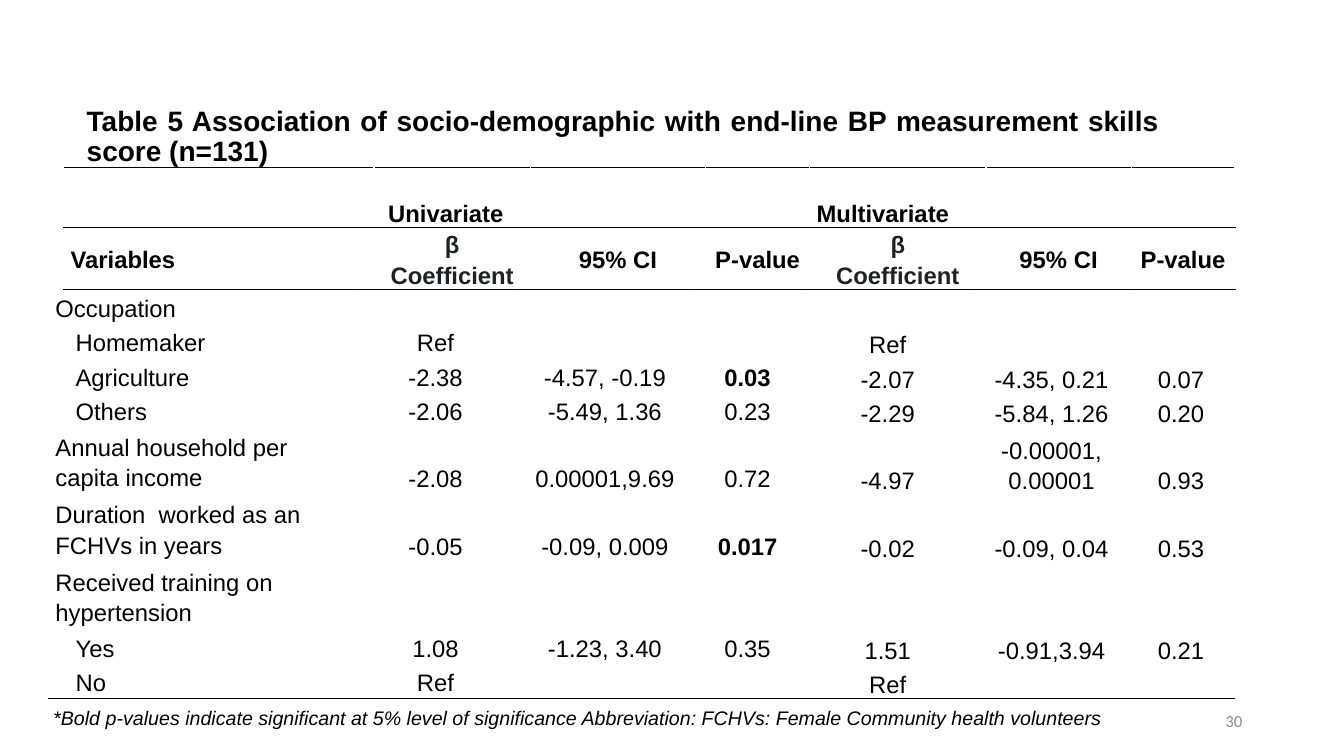
from lxml import etree
from pptx import Presentation
from pptx.dml.color import RGBColor
from pptx.enum.text import MSO_ANCHOR, PP_ALIGN
from pptx.oxml.ns import qn
from pptx.util import Inches, Pt

BLACK = RGBColor(0x00, 0x00, 0x00)
CHARCOAL = RGBColor(0x20, 0x21, 0x24)
GREY = RGBColor(0x8C, 0x8C, 0x8C)
LEFT, CENTER, RIGHT = PP_ALIGN.LEFT, PP_ALIGN.CENTER, PP_ALIGN.RIGHT
JUSTIFY = PP_ALIGN.JUSTIFY
TOP, MIDDLE, BOTTOM = MSO_ANCHOR.TOP, MSO_ANCHOR.MIDDLE, MSO_ANCHOR.BOTTOM

TITLE = ("Table 5 Association of socio-demographic with end-line BP "
         "measurement skills score (n=131)")
FOOTNOTE = ("*Bold p-values indicate significant at 5% level of significance "
            "Abbreviation: FCHVs: Female Community health volunteers")

HEADER_WIDTHS = [3.08, 1.55, 1.74, 1.03, 1.75, 1.44, 1.03]
HEADER_HEIGHTS = [0.6, 0.61]
HEADER_ROWS = [
    ["", "Univariate", "", "", "Multivariate", "", ""],
    ["Variables", "β Coefficient", "95% CI", "P-value",
     "β Coefficient", "95% CI", "P-value"],
]
UNIVARIATE, MULTIVARIATE = 1, 4

BODY_WIDTHS = [3.05, 1.58, 1.78, 1.05, 1.73, 1.52, 1.05]
SINGLE_HEIGHT, DOUBLE_HEIGHT = 0.34, 0.67
BODY_ROWS = [
    ["Occupation", "", "", "", "", "", ""],
    ["Homemaker", "Ref", "", "", "Ref", "", ""],
    ["Agriculture", "-2.38", "-4.57, -0.19", "0.03",
     "-2.07", "-4.35, 0.21", "0.07"],
    ["Others", "-2.06", "-5.49, 1.36", "0.23",
     "-2.29", "-5.84, 1.26", "0.20"],
    ["Annual household per capita income", "-2.08", "0.00001,9.69", "0.72",
     "-4.97", "-0.00001, 0.00001", "0.93"],
    ["Duration\u00a0 worked as an FCHVs in years", "-0.05", "-0.09, 0.009",
     "0.017", "-0.02", "-0.09, 0.04", "0.53"],
    ["Received training on hypertension", "", "", "", "", "", ""],
    ["Yes", "1.08", "-1.23, 3.40", "0.35", "1.51", "-0.91,3.94", "0.21"],
    ["No", "Ref", "", "", "Ref", "", ""],
]
INDENTED = {"Homemaker", "Agriculture", "Others", "Yes", "No"}
SIGNIFICANT = {"0.03", "0.017"}


def write_text(frame, text, *, size=17, font="Arial", color=BLACK, bold=False,
               italic=False, align=LEFT, spacing=1.0):
    paragraph = frame.paragraphs[0]
    paragraph.alignment = align
    paragraph.line_spacing = spacing
    paragraph.font.size = Pt(size)
    if not text:
        # Keeps an empty table cell from growing its row
        etree.SubElement(paragraph._p, qn("a:endParaRPr"), sz=str(size * 100))
        return
    run = paragraph.add_run()
    run.text = text
    run.font.size = Pt(size)
    run.font.name = font
    run.font.bold = bold
    run.font.italic = italic
    run.font.color.rgb = color


def add_text(slide, left, top, width, height, text, anchor=TOP, **text_format):
    box = slide.shapes.add_textbox(
        Inches(left), Inches(top), Inches(width), Inches(height))
    box.text_frame.word_wrap = True
    box.text_frame.vertical_anchor = anchor
    write_text(box.text_frame, text, **text_format)


def add_plain_table(slide, left, top, widths, heights):
    frame = slide.shapes.add_table(
        len(heights), len(widths), Inches(left), Inches(top),
        Inches(sum(widths)), Inches(sum(heights)))
    table = frame.table
    table.first_row = False
    table.horz_banding = False
    for column, width in zip(table.columns, widths):
        column.width = Inches(width)
    for row, height in zip(table.rows, heights):
        row.height = Inches(height)
    return table


def fill_cell(cell, text, *, anchor=MIDDLE, margins=(0.07, 0.07), lift=0,
              **text_format):
    cell.fill.background()
    cell.vertical_anchor = anchor
    cell.margin_left, cell.margin_right = (Inches(side) for side in margins)
    cell.margin_top, cell.margin_bottom = 0, Inches(lift)
    write_text(cell.text_frame, text, spacing=1.15, **text_format)


def add_border(cell, side):
    line = etree.Element(qn(f"a:ln{side}"), w=str(Pt(1)))
    fill = etree.SubElement(line, qn("a:solidFill"))
    etree.SubElement(fill, qn("a:srgbClr"), val=str(BLACK))
    cell._tc.get_or_add_tcPr().insert(0, line)


def add_title(slide):
    title = slide.shapes.title
    title.left, title.top = Inches(0.76), Inches(1.01)
    title.width, title.height = Inches(10.84), Inches(0.98)
    title.text_frame.vertical_anchor = TOP
    write_text(title.text_frame, TITLE, size=20, bold=True, align=JUSTIFY,
               spacing=0.9)


def add_header_table(slide):
    table = add_plain_table(slide, 0.63, 1.66, HEADER_WIDTHS, HEADER_HEIGHTS)
    for column, text in enumerate(HEADER_ROWS[0]):
        indent = 0.14 if column == UNIVARIATE else 0.07
        fill_cell(table.cell(0, column), text, anchor=BOTTOM,
                  margins=(indent, 0.07), bold=True)
    for column, text in enumerate(HEADER_ROWS[1]):
        side = 0.19 if column == MULTIVARIATE else 0.07
        fill_cell(table.cell(1, column), text, margins=(side, side), bold=True,
                  align=CENTER if column else LEFT,
                  color=CHARCOAL if text.startswith("β") else BLACK)
    for cell in table.iter_cells():
        add_border(cell, "B")
        add_border(cell, "T")


def add_body_table(slide):
    heights = [DOUBLE_HEIGHT if len(row[0]) > 15 else SINGLE_HEIGHT
               for row in BODY_ROWS]
    table = add_plain_table(slide, 0.48, 2.88, BODY_WIDTHS, heights)
    for row, (label, *values) in enumerate(BODY_ROWS):
        indent = 0.27 if label in INDENTED else 0.07
        fill_cell(table.cell(row, 0), label, margins=(indent, 0.07))
        for column, value in enumerate(values, start=1):
            fill_cell(table.cell(row, column), value, anchor=BOTTOM,
                      lift=0.02 if column < MULTIVARIATE else 0,
                      align=CENTER, bold=value in SIGNIFICANT)
    for cell in table.rows[len(BODY_ROWS) - 1].cells:
        add_border(cell, "B")


def main():
    presentation = Presentation()
    presentation.slide_width = Inches(13.33)
    presentation.slide_height = Inches(7.5)
    slide = presentation.slides.add_slide(presentation.slide_layouts[5])

    add_title(slide)
    add_header_table(slide)
    add_body_table(slide)

    # Footnote and slide number
    add_text(slide, 0.43, 6.95, 11.83, 0.34, FOOTNOTE, size=14, italic=True)
    add_text(slide, 9.42, 6.95, 3, 0.4, "30", anchor=MIDDLE, size=12,
             font="Calibri", color=GREY, align=RIGHT)

    presentation.save("out.pptx")


if __name__ == "__main__":
    main()
